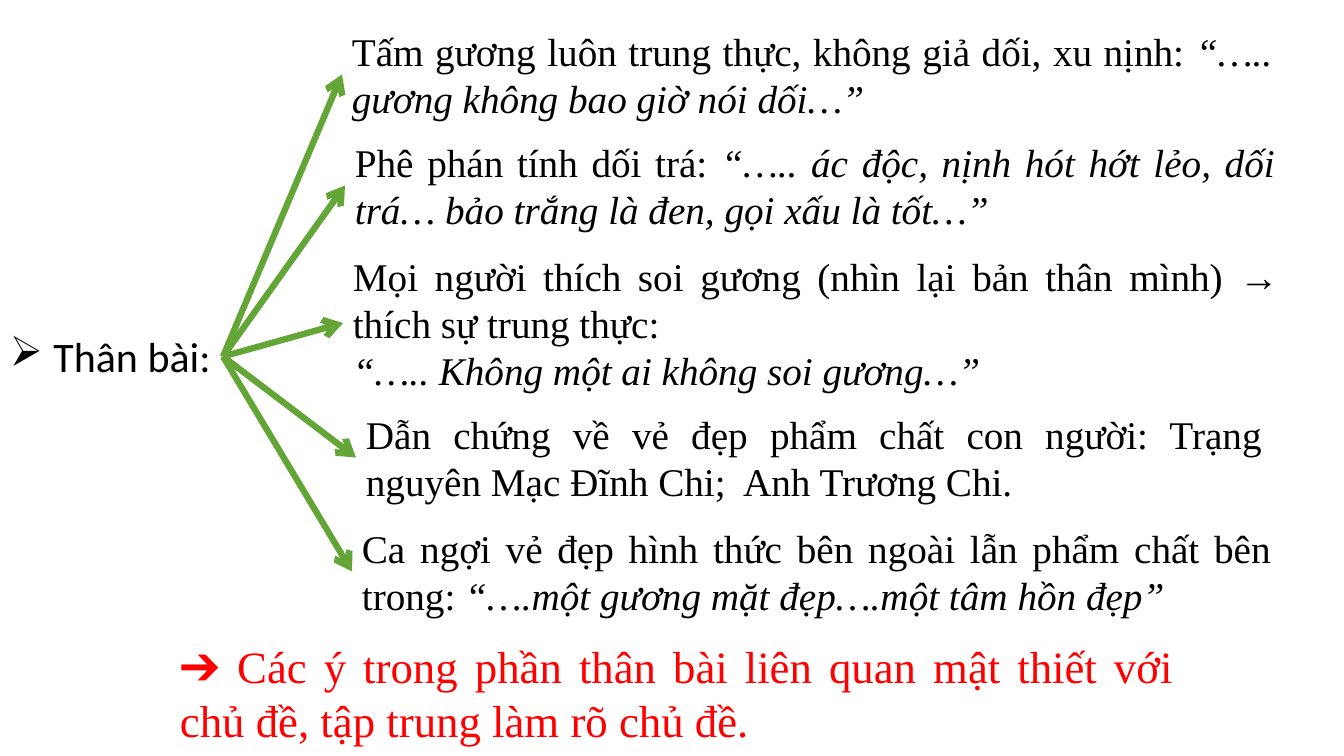
"""Builds a slide that links the body of an essay to its five ideas and a conclusion."""
from lxml import etree
from pptx import Presentation
from pptx import util as u
from pptx.dml.color import RGBColor
from pptx.enum import shapes, text
from pptx.oxml.ns import qn

PX = 914400 / 100.8
COLORS = {"ink": "000000", "arrow": "63A537", "conclusion": "FF0000"}
SERIF = "Times New Roman"
IDEAS = [
    ((342, 22, 940, 105),
     [[("Tấm gương luôn trung thực, không giả dối, xu nịnh: ", False),
       ("“….. gương không bao giờ nói dối…”", True)]]),
    ((345, 133, 940, 105),
     [[("Phê phán tính dối trá: ", False),
       ("“….. ác độc, nịnh hót hớt lẻo, dối trá… bảo trắng là đen, gọi xấu là tốt…”", True)]]),
    ((343, 247, 946, 152),
     [[("Mọi người thích soi gương (nhìn lại bản thân mình) → thích sự trung thực:", False)],
      [("“….. Không một ai không soi gương…”", True)]]),
    ((356, 405, 916, 105),
     [[("Dẫn chứng về vẻ đẹp phẩm chất con người: Trạng nguyên Mạc Đĩnh Chi;  Anh Trương Chi.",
        False)]]),
    ((352, 519, 929, 105),
     [[("Ca ngợi vẻ đẹp hình thức bên ngoài lẫn phẩm chất bên trong: ", False),
       ("“….một gương mặt đẹp….một tâm hồn đẹp”", True)]]),
]


def px(n):
    return u.Emu(round(n * PX))


def add_text(s, box, paragraphs, size=28, font=SERIF, color="ink", wrap=True):
    sp = s.shapes.add_textbox(*map(px, box))
    tf = sp.text_frame
    tf.word_wrap = wrap
    tf.auto_size = text.MSO_AUTO_SIZE.SHAPE_TO_FIT_TEXT
    for i, runs in enumerate(paragraphs):
        p = tf.add_paragraph() if i else tf.paragraphs[0]
        p.alignment = text.PP_ALIGN.JUSTIFY
        for words, italic in runs:
            r = p.add_run()
            r.text = words
            r.font.size = u.Pt(size)
            r.font.name = font
            r.font.italic = italic
            r.font.color.rgb = RGBColor.from_string(COLORS[color])
    return sp


def add_bullet(p, char, indent):
    pPr = p._p.get_or_add_pPr()
    pPr.set("marL", str(px(indent)))
    pPr.set("indent", str(-px(indent)))
    etree.SubElement(pPr, qn("a:buChar")).set("char", char)


def add_arrow(s, start, end):
    cx = s.shapes.add_connector(shapes.MSO_CONNECTOR.STRAIGHT, 0, 0, 0, 0)
    cx.begin_connect(start, 3)
    cx.end_connect(end, 1)
    cx.line.color.rgb = RGBColor.from_string(COLORS["arrow"])
    cx.line.width = u.Pt(4.5)
    etree.SubElement(cx.line._get_or_add_ln(), qn("a:tailEnd")).set("type", "arrow")
    etree.SubElement(cx._element.spPr, qn("a:effectLst"))


def main():
    prs = Presentation()
    prs.slide_width, prs.slide_height = px(1344), px(756)
    s = prs.slides.add_slide(prs.slide_layouts[6])
    label = add_text(s, (0, 326, 223, 61), [[(" Thân bài:", False)]],
                     size=30, font="Calibri", wrap=False)
    add_bullet(label.text_frame.paragraphs[0], "➢", 34)
    for box, paragraphs in IDEAS:
        add_arrow(s, label, add_text(s, box, paragraphs))
    add_text(s, (170, 634, 1014, 119),
             [[("➔ Các ý trong phần thân bài liên quan mật thiết với chủ đề, "
                "tập trung làm rõ chủ đề.", False)]], size=32, color="conclusion")
    prs.save("out.pptx")


if __name__ == "__main__":
    main()
